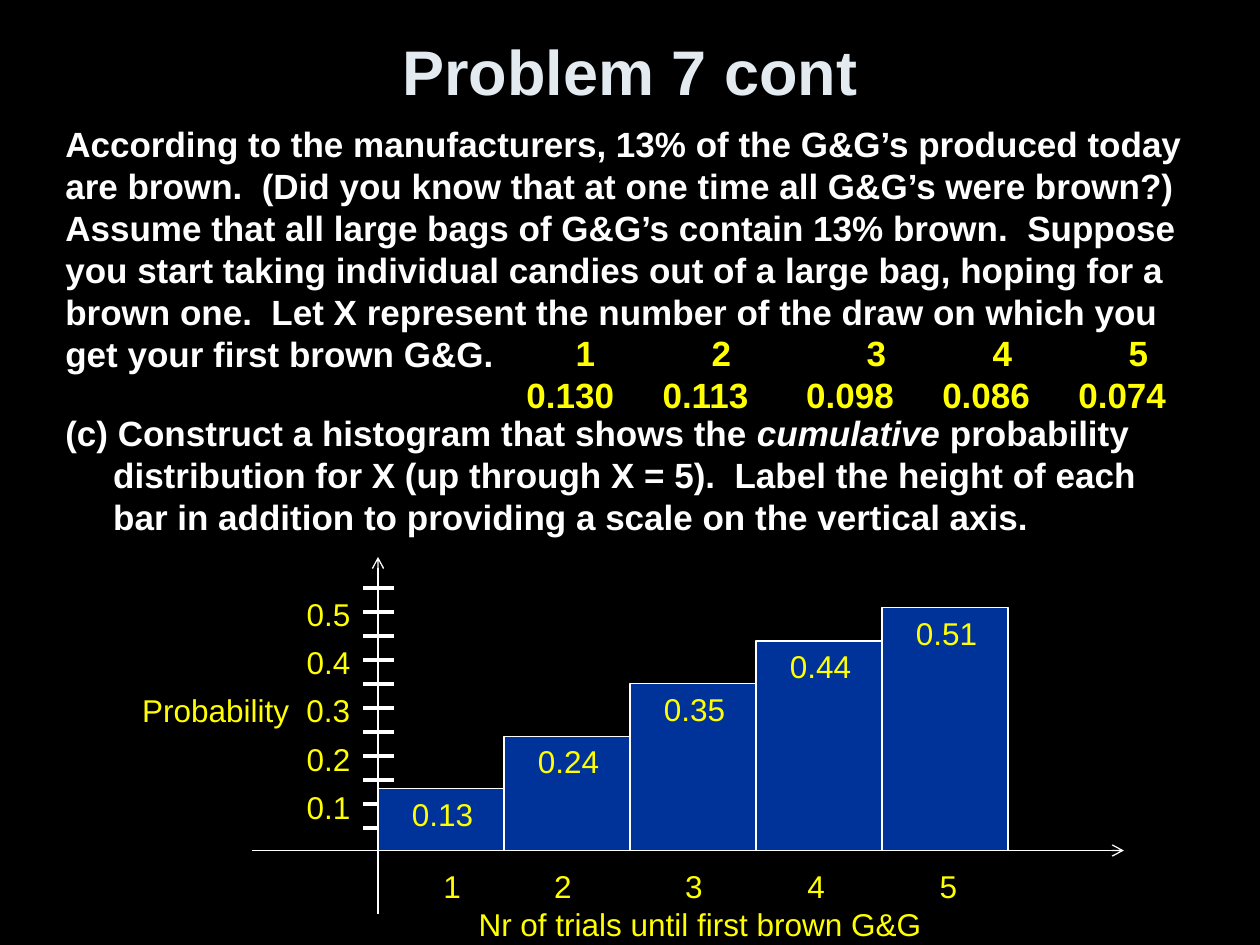
import pptx
import pptx.dml.color
import pptx.enum.shapes
import pptx.enum.text
import pptx.oxml
import pptx.oxml.ns
import pptx.util

Inches = pptx.util.Inches
Pt = pptx.util.Pt
RGB = pptx.dml.color.RGBColor.from_string
ALIGN = pptx.enum.text.PP_ALIGN
ANCHOR = pptx.enum.text.MSO_ANCHOR
THEME = {
    "background": RGB("000000"),
    "bar": RGB("003399"),
    "line": RGB("FFFFFF"),
    "title": {"name": "Arial", "size": Pt(36), "bold": True, "color": RGB("E3EBF1")},
    "body": {"name": "Arial", "size": Pt(20), "bold": True, "color": RGB("FFFFFF")},
    "value": {"name": "Arial", "size": Pt(20), "bold": True, "color": RGB("FFFF00")},
    "chart": {"name": "Arial", "size": Pt(18), "bold": False, "color": RGB("FFFF00")},
}

deck = pptx.Presentation()
deck.slide_width, deck.slide_height = Inches(10), Inches(7.5)
slide = deck.slides.add_slide(deck.slide_layouts[6])
slide.background.fill.solid()
slide.background.fill.fore_color.rgb = THEME["background"]


def write(box, style, paragraphs, anchor=ANCHOR.TOP, wrap=True):
    frame = slide.shapes.add_textbox(*map(Inches, box)).text_frame
    frame.word_wrap = wrap
    frame.vertical_anchor = anchor
    for index, (pieces, layout) in enumerate(paragraphs):
        paragraph = frame.paragraphs[0] if index == 0 else frame.add_paragraph()
        props = paragraph._p.get_or_add_pPr()
        if "hanging" in layout:
            props.set("marL", str(Inches(layout["hanging"])))
            props.set("indent", str(-Inches(layout["hanging"])))
        if "margin" in layout:
            props.set("marL", str(Inches(layout["margin"])))
        if "tabs" in layout:
            stops = pptx.oxml.parse_xml(f'<a:tabLst {pptx.oxml.ns.nsdecls("a")}/>')
            for position, side in layout["tabs"]:
                stop = stops.makeelement(pptx.oxml.ns.qn("a:tab"), {"pos": str(Inches(position)), "algn": side})
                stops.append(stop)
            props.append(stops)
        for key in ("alignment", "space_before", "space_after"):
            if key in layout:
                setattr(paragraph, key, layout[key])
        for text, italic in pieces:
            run = paragraph.add_run()
            run.text = text
            for key, value in style.items():
                if key == "color":
                    run.font.color.rgb = value
                else:
                    setattr(run.font, key, value)
            if italic:
                run.font.italic = True


def draw_line(start, end, width, arrow=False):
    line = slide.shapes.add_connector(
        pptx.enum.shapes.MSO_CONNECTOR.STRAIGHT, *map(Inches, (*start, *end))
    )
    line.line.color.rgb = THEME["line"]
    line.line.width = Pt(width)
    if arrow:
        head = pptx.oxml.parse_xml(f'<a:tailEnd {pptx.oxml.ns.nsdecls("a")} type="arrow"/>')
        line.line._get_or_add_ln().append(head)
    line._element.spPr.append(pptx.oxml.parse_xml(f'<a:effectLst {pptx.oxml.ns.nsdecls("a")}/>'))


write((0.5, 0.12, 9, 0.87), THEME["title"],
      [([("Problem 7 cont", False)], {"alignment": ALIGN.CENTER})], ANCHOR.MIDDLE)

problem = (
    "According to the manufacturers, 13% of the G&G’s produced today are brown.  "
    "(Did you know that at one time all G&G’s were brown?)  Assume that all large bags "
    "of G&G’s contain 13% brown.  Suppose you start taking individual candies out of a "
    "large bag, hoping for a brown one.  Let X represent the number of the draw on which "
    "you get your first brown G&G."
)
question = [
    ("(c) Construct a histogram that shows the ", False),
    ("cumulative", True),
    (" probability distribution for X (up through X = 5).  Label the height of each bar "
     "in addition to providing a scale on the vertical axis.", False),
]
write((0.42, 0.92, 9.17, 3.75), THEME["body"], [
    ([(problem, False)], {}),
    (question, {"hanging": 0.38, "space_before": Pt(21)}),
])

trials = ["1", "2", "3", "4", "5"]
probabilities = ["0.130", "0.113", "0.098", "0.086", "0.074"]
trial_stops = [(x, "l") for x in (0.39, 1.47, 2.7, 3.7, 4.78)]
probability_stops = [(x, "l") for x in (1.08, 2.22, 3.3, 4.38)]
write((4.08, 2.58, 5.31, 0.77), THEME["value"], [
    ([("\t" + "\t".join(trials), False)], {"tabs": trial_stops}),
    ([("\t".join(probabilities), False)], {"tabs": probability_stops}),
])

baseline, origin, unit_height = 6.75, 3, 3.78
draw_line((2, baseline), (8.92, baseline), 0.75, arrow=True)
draw_line((origin, 7.25), (origin, 4.42), 0.75, arrow=True)
for tick in range(11):
    height = 4.67 + tick * 0.19
    draw_line((2.88, height), (3.13, height), 2.25)

axis_stops = [(x, "l") for x in (0.88, 1.92, 2.89, 3.94)]
write((3.42, 6.83, 4.34, 0.71), THEME["chart"], [
    ([("\t".join(trials), False)], {"tabs": axis_stops}),
    ([("Nr of trials until first brown G&G", False)], {"margin": 0.28}),
])

cumulative = [0.13, 0.24, 0.35, 0.44, 0.51]
for index, total in enumerate(cumulative):
    height = total * unit_height
    bar = slide.shapes.add_shape(
        pptx.enum.shapes.MSO_SHAPE.RECTANGLE,
        *map(Inches, (origin + index, baseline - height, 1, height)),
    )
    bar.shadow.inherit = False
    bar.fill.solid()
    bar.fill.fore_color.rgb = THEME["bar"]
    bar.line.color.rgb = THEME["line"]
    bar.line.width = Pt(0.75)

scale_layout = {"alignment": ALIGN.RIGHT, "space_after": Pt(6)}
named_layout = {"tabs": [(0.2, "l"), (1.85, "r")], "space_after": Pt(6)}
scale = [([(label, False)], scale_layout) for label in ("0.5", "0.4", "0.3", "0.2", "0.1")]
scale[2] = ([("\tProbability\t0.3", False)], named_layout)
write((0.83, 4.67, 2.05, 1.95), THEME["chart"], scale)

for index, total in enumerate(cumulative):
    top = baseline - total * unit_height
    write((origin + index + 0.17, top, 0.69, 0.4), THEME["chart"],
          [([(f"{total:.2f}", False)], {})], wrap=False)

deck.save("out.pptx")
